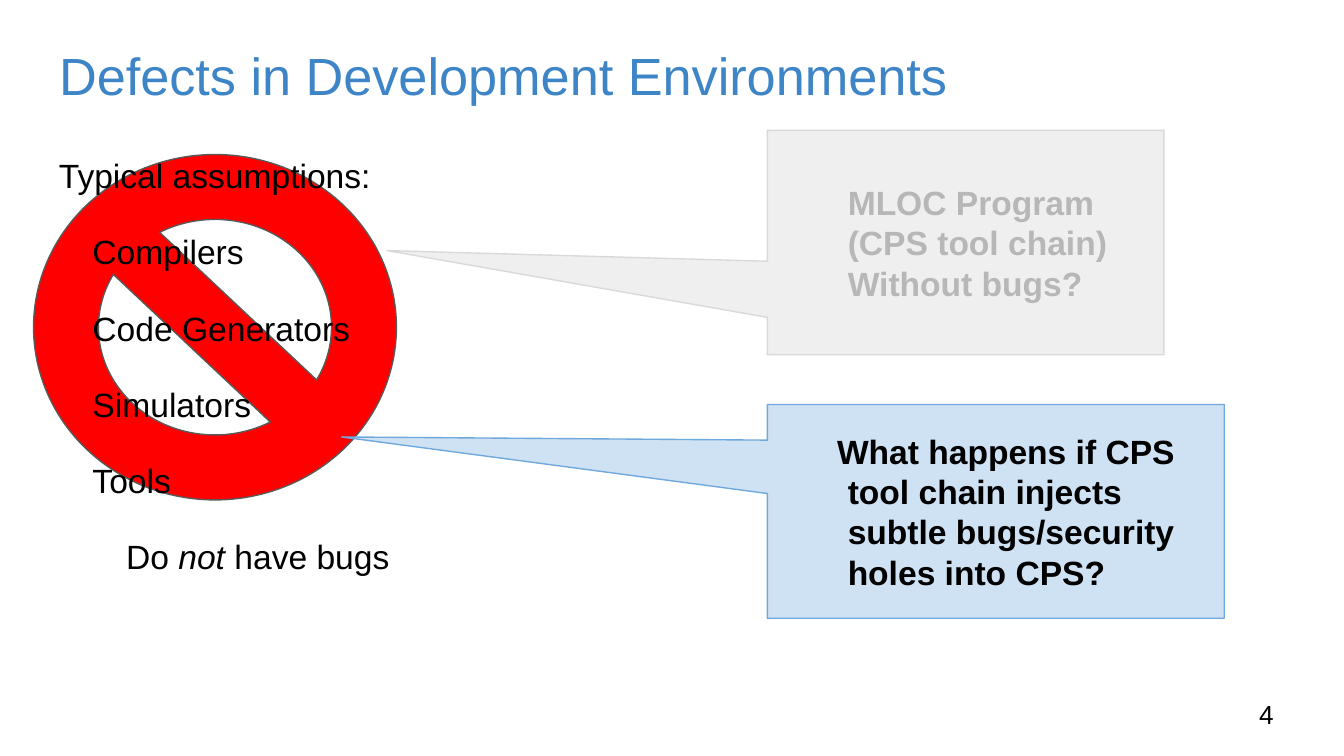
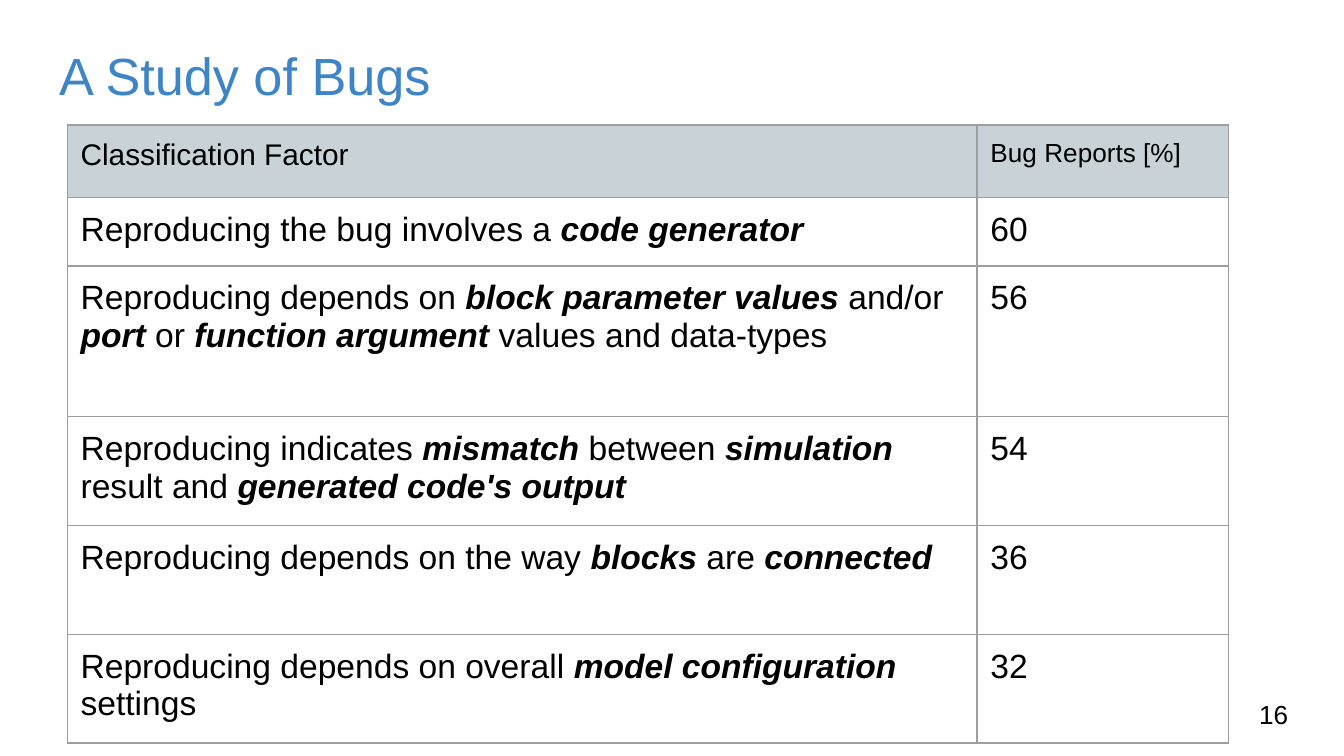
from lxml.etree import SubElement
from pptx import Presentation
from pptx.dml.color import RGBColor
from pptx.enum.shapes import MSO_SHAPE
from pptx.enum.text import MSO_ANCHOR, MSO_AUTO_SIZE, PP_ALIGN
from pptx.oxml.ns import qn
from pptx.util import Inches, Pt

FONT = "Arial"
BLACK = "000000"
TITLE_BLUE = "3D85C6"
HEADER_GREY = "C9D3D7"
GRID_GREY = "9E9E9E"
BODY_SIZE = 18
INSET = 0.1


def color(value):
    return RGBColor.from_string(value)


def box(*lengths):
    return [Inches(length) for length in lengths]


class Deck:
    def __init__(self):
        self.presentation = Presentation()
        self.presentation.slide_width = Inches(10)
        self.presentation.slide_height = Inches(5.625)
        self.slide = None

    def add_slide(self, heading, number):
        layout = self.presentation.slide_layouts[5]
        self.slide = self.presentation.slides.add_slide(layout)
        title = self.slide.shapes.title
        title.left, title.top, title.width, title.height = box(0.34, 0.15, 9.32, 0.63)
        self.frame(title.text_frame, MSO_ANCHOR.TOP)
        self.spaced(self.add_runs(title.text_frame.paragraphs[0], heading, 28, TITLE_BLUE))
        page = self.slide.shapes.add_textbox(*box(9.27, 5.1, 0.6, 0.43))
        self.frame(page.text_frame, MSO_ANCHOR.MIDDLE)
        self.add_runs(page.text_frame.paragraphs[0], str(number), 14)

    def frame(self, frame, anchor):
        frame.word_wrap = True
        frame.auto_size = MSO_AUTO_SIZE.NONE
        frame.vertical_anchor = anchor
        frame.margin_left = frame.margin_right = Inches(INSET)
        frame.margin_top = frame.margin_bottom = Inches(INSET)

    def add_runs(self, paragraph, text, size=BODY_SIZE, ink=BLACK, bold=False, emphasis_bold=False):
        paragraph.alignment = PP_ALIGN.LEFT
        for index, part in enumerate(text.split("*")):
            if not part:
                continue
            emphasized = index % 2 == 1
            run = paragraph.add_run()
            run.text = part
            run.font.name = FONT
            run.font.size = Pt(size)
            run.font.color.rgb = color(ink)
            run.font.bold = bold or (emphasized and emphasis_bold)
            run.font.italic = emphasized
        return paragraph

    def spaced(self, paragraph):
        paragraph.line_spacing = 1.15
        paragraph.space_before = Pt(0)
        paragraph.space_after = Pt(16)

    def indent(self, paragraph, margin, first=0):
        properties = paragraph._p.get_or_add_pPr()
        properties.set("marL", str(Inches(margin)))
        properties.set("indent", str(Inches(first)))

    def paragraphs(self, frame, lines):
        for index, line in enumerate(lines):
            yield frame.add_paragraph() if index else frame.paragraphs[0], line

    def body(self, place, lines):
        text_box = self.slide.shapes.add_textbox(*box(*place))
        self.frame(text_box.text_frame, MSO_ANCHOR.TOP)
        for paragraph, (text, margin, first) in self.paragraphs(text_box.text_frame, lines):
            self.spaced(self.add_runs(paragraph, text))
            self.indent(paragraph, margin, first)

    def shape(self, kind, place, adjustments, fill, line):
        shape = self.slide.shapes.add_shape(kind, *box(*place))
        for index, value in enumerate(adjustments):
            shape.adjustments[index] = value
        shape.shadow.inherit = False
        shape.fill.solid()
        shape.fill.fore_color.rgb = color(fill)
        shape.line.color.rgb = color(line)
        shape.line.width = Pt(0.75)
        return shape

    def callout(self, place, pointer, lines, fill, line, ink, first=0):
        callout = self.shape(
            MSO_SHAPE.ROUNDED_RECTANGULAR_CALLOUT, place, (*pointer, 0), fill, line
        )
        self.frame(callout.text_frame, MSO_ANCHOR.MIDDLE)
        for paragraph, text in self.paragraphs(callout.text_frame, lines):
            self.add_runs(paragraph, text, ink=ink, bold=True)
            self.indent(paragraph, 0.5, first)

    def cell(self, cell, text, size, fill=None):
        cell.margin_left = cell.margin_right = Inches(INSET)
        cell.margin_top = cell.margin_bottom = Inches(INSET)
        self.add_runs(cell.text_frame.paragraphs[0], text, size, emphasis_bold=True)
        properties = cell._tc.get_or_add_tcPr()
        for side in ("a:lnL", "a:lnR", "a:lnT", "a:lnB"):
            border = SubElement(properties, qn(side), w=str(Pt(0.75)))
            solid = SubElement(border, qn("a:solidFill"))
            SubElement(solid, qn("a:srgbClr"), val=GRID_GREY)
        if fill:
            cell.fill.solid()
            cell.fill.fore_color.rgb = color(fill)
        else:
            cell.fill.background()

    def table(self, place, widths, heights, header, rows):
        table = self.slide.shapes.add_table(
            len(heights), len(widths), *box(*place, sum(widths), sum(heights))
        ).table
        table.first_row = table.horz_banding = False
        for column, width in zip(table.columns, widths):
            column.width = Inches(width)
        for row, height in zip(table.rows, heights):
            row.height = Inches(height)
        for index, (text, size) in enumerate(header):
            self.cell(table.cell(0, index), text, size, HEADER_GREY)
        for row_index, row in enumerate(rows, 1):
            for column_index, text in enumerate(row):
                self.cell(table.cell(row_index, column_index), text, BODY_SIZE)


def add_defects(deck):
    deck.add_slide("Defects in Development Environments", 4)
    deck.shape(MSO_SHAPE.NO_SYMBOL, (0.25, 1.15, 2.7, 2.57), [0.188], "FF0000", "595959")
    tools = ["Compilers", "Code Generators", "Simulators", "Tools"]
    deck.body(
        (0.34, 1.01, 4.54, 3.9),
        [("Typical assumptions:", 0, 0)]
        + [(tool, 0.5, -0.25) for tool in tools]
        + [("Do *not* have bugs", 0.5, 0)],
    )
    deck.callout(
        (5.71, 0.97, 2.95, 1.67), (-1.459, 0.036),
        ["MLOC Program", "(CPS tool chain)", "Without bugs?"],
        "EFEFEF", "D9D9D9", "B7B7B7",
    )
    deck.callout(
        (5.71, 3.01, 3.4, 1.59), (-1.432, -0.348),
        ["What happens if CPS tool chain injects subtle bugs/security holes into CPS?"],
        "CFE2F3", "6FA8DC", BLACK, first=-0.08,
    )


def add_study(deck):
    deck.add_slide("A Study of Bugs", 16)
    deck.table(
        (0.5, 0.93), [6.77, 1.87], [0.54, 0.51, 1.12, 0.81, 0.81, 0.81],
        [("Classification Factor", 16), ("Bug Reports [%]", 14)],
        [
            ("Reproducing the bug involves a *code generator*", "60"),
            ("Reproducing depends on *block parameter values *and/or *port* or "
             "*function argument* values and data-types", "56"),
            ("Reproducing indicates *mismatch* between *simulation* result and "
             "*generated code's output*", "54"),
            ("Reproducing depends on the way *blocks* are *connected*", "36"),
            ("Reproducing depends on overall *model configuration *settings", "32"),
        ],
    )


def main():
    deck = Deck()
    add_defects(deck)
    add_study(deck)
    deck.presentation.save("out.pptx")


if __name__ == "__main__":
    main()
